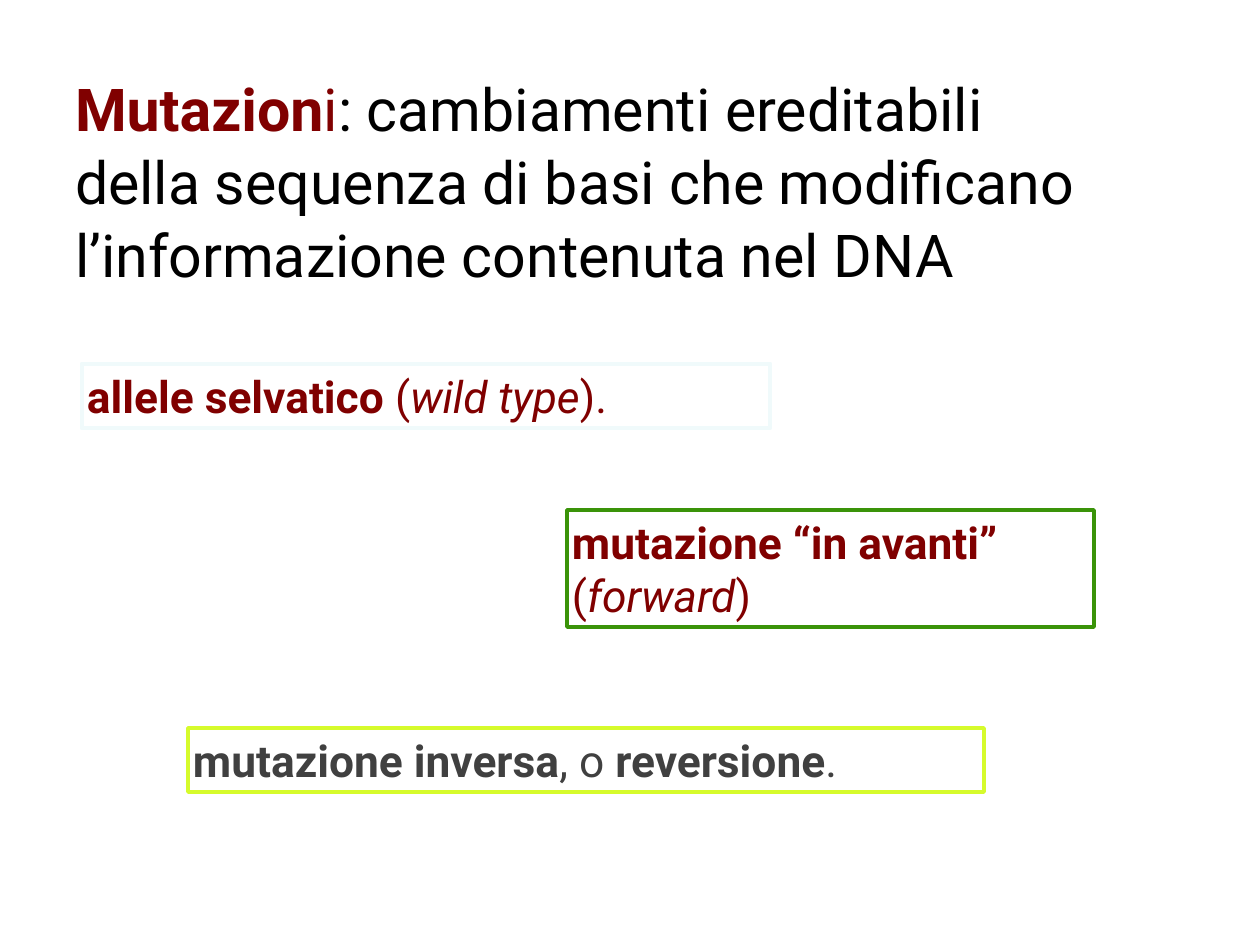
from pptx import Presentation
from pptx.dml.color import RGBColor
from pptx.enum import shapes, text
from pptx.util import Pt

PX = 10320
FONT = "Roboto"
INSET = 5
WHITE = RGBColor(0xFF, 0xFF, 0xFF)
BLACK = RGBColor(0x00, 0x00, 0x00)
MAROON = RGBColor(0x80, 0x00, 0x00)
GREY = RGBColor(0x40, 0x40, 0x40)
GREEN = RGBColor(0x3A, 0x93, 0x09)
LIME = RGBColor(0xD6, 0xFB, 0x2C)
ICE = RGBColor(0xF0, 0xFA, 0xFB)


def px(n):
    return n * PX


def add_run(p, words, size=36, color=MAROON, bold=False, italic=False):
    r = p.add_run()
    r.text = words
    r.font.name = FONT
    r.font.size = Pt(size)
    r.font.color.rgb = color
    r.font.bold = bold
    r.font.italic = italic


def prepare_frame(sp):
    tf = sp.text_frame
    tf.word_wrap = True
    tf.auto_size = text.MSO_AUTO_SIZE.NONE
    tf.vertical_anchor = text.MSO_ANCHOR.MIDDLE
    tf.margin_left = tf.margin_right = px(INSET)
    tf.margin_top = tf.margin_bottom = px(INSET)
    return tf


def add_title(s, left, top, width, height):
    sp = s.shapes.title
    sp.left, sp.top, sp.width, sp.height = map(px, (left, top, width, height))
    p = prepare_frame(sp).paragraphs[0]
    p.alignment = text.PP_ALIGN.LEFT
    p.line_spacing = 1.03
    add_run(p, "Mutazion", size=48, bold=True)
    add_run(p, "i", size=48)
    add_run(p, ": cambiamenti ereditabili della sequenza di basi che "
               "modificano l’informazione contenuta nel DNA", size=48, color=BLACK)


def add_term_box(s, left, top, width, height, border, weight, lines, color=MAROON):
    sp = s.shapes.add_shape(shapes.MSO_SHAPE.RECTANGLE,
                            *map(px, (left, top, width, height)))
    sp.shadow.inherit = False
    sp.fill.background()
    sp.line.color.rgb = border
    sp.line.width = Pt(weight)
    tf = prepare_frame(sp)
    for i, line in enumerate(lines):
        p = tf.add_paragraph() if i else tf.paragraphs[0]
        p.alignment = text.PP_ALIGN.LEFT
        for words, style in line:
            add_run(p, words, color=color, **style)


def main():
    prs = Presentation()
    prs.slide_width, prs.slide_height = px(1260), px(945)
    s = prs.slides.add_slide(prs.slide_layouts[5])
    s.background.fill.solid()
    s.background.fill.fore_color.rgb = WHITE
    bold, italic, plain = {"bold": True}, {"italic": True}, {}

    add_title(s, 70, 67, 1046, 225)
    add_term_box(s, 567, 510, 527, 117, GREEN, 3, [
        [("mutazione “in avanti”", bold)],
        [("(", plain), ("forward", italic), (")", plain)],
    ])
    add_term_box(s, 188, 728, 796, 64, LIME, 3, [
        [("mutazione inversa", bold), (", o ", plain),
         ("reversione", bold), (".", plain)],
    ], color=GREY)
    add_term_box(s, 82, 364, 688, 64, ICE, 4, [
        [("allele selvatico ", bold), ("(", plain),
         ("wild type", italic), (").", plain)],
    ])
    prs.save("out.pptx")


if __name__ == "__main__":
    main()
